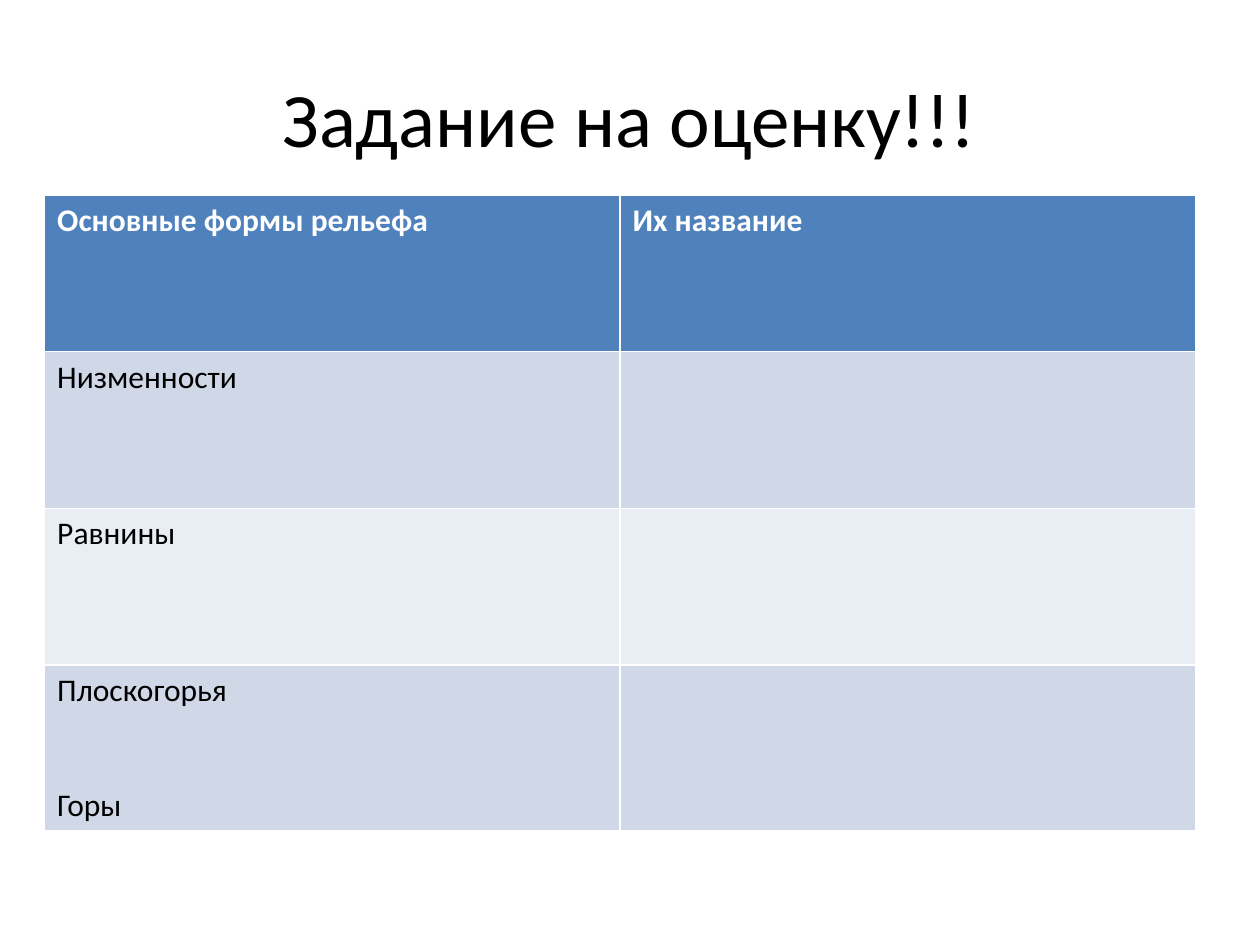
"""Build a worksheet slide about landforms with a two-column table."""
import dataclasses

import pptx
import pptx.dml.color
import pptx.enum.text
import pptx.util

Cm = pptx.util.Cm


@dataclasses.dataclass(frozen=True)
class Theme:
    """Colours, font and type sizes of the slide."""
    font: str = "Calibri"
    ink: str = "000000"
    header_ink: str = "FFFFFF"
    header_fill: str = "4F81BD"
    bands: tuple = ("D0D8E8", "E9EDF4")
    title_size: int = 44
    cell_size: int = 18


def write(paragraph, text, *, font, size, color, bold=False, align=None, gap=0):
    """Put formatted text into a paragraph."""
    paragraph.alignment = align
    paragraph.space_before = pptx.util.Pt(gap)
    run = paragraph.add_run()
    run.text = text
    run.font.name = font
    run.font.size = pptx.util.Pt(size)
    run.font.bold = bold
    run.font.color.rgb = pptx.dml.color.RGBColor.from_string(color)


class SlideBuilder:
    """Adds styled elements to the current slide."""

    def __init__(self, slide, theme):
        """Keep the slide and its theme."""
        self.slide = slide
        self.theme = theme

    def title(self, text, left, top, width, height):
        """Add the centred heading."""
        heading = self.slide.shapes.add_textbox(Cm(left), Cm(top), Cm(width), Cm(height))
        frame = heading.text_frame
        frame.word_wrap = True
        frame.vertical_anchor = pptx.enum.text.MSO_ANCHOR.MIDDLE
        write(frame.paragraphs[0], text, font=self.theme.font, size=self.theme.title_size,
              color=self.theme.ink, align=pptx.enum.text.PP_ALIGN.CENTER)

    def table(self, rows, left, top, width, row_height, gap):
        """Add a banded table whose cells hold lists of paragraphs."""
        theme = self.theme
        grid = self.slide.shapes.add_table(
            len(rows), len(rows[0]), Cm(left), Cm(top), Cm(width), Cm(row_height * len(rows))).table
        for row_index, row in enumerate(rows):
            is_header = row_index == 0
            fill = theme.header_fill if is_header else theme.bands[(row_index - 1) % 2]
            for column_index, lines in enumerate(row):
                cell = grid.cell(row_index, column_index)
                cell.fill.solid()
                cell.fill.fore_color.rgb = pptx.dml.color.RGBColor.from_string(fill)
                frame = cell.text_frame
                for line_index, line in enumerate(lines):
                    paragraph = frame.add_paragraph() if line_index else frame.paragraphs[0]
                    write(paragraph, line, font=theme.font, size=theme.cell_size,
                          color=theme.header_ink if is_header else theme.ink,
                          bold=is_header, gap=gap if line_index else 0)


def main():
    """Build and save the presentation."""
    presentation = pptx.Presentation()
    presentation.slide_width = Cm(25.4)
    presentation.slide_height = Cm(19.05)
    builder = SlideBuilder(presentation.slides.add_slide(presentation.slide_layouts[6]), Theme())
    builder.title("Задание на оценку!!!", 1.27, 0.76, 22.86, 3.18)
    landforms = [
        (["Основные формы рельефа"], ["Их название"]),
        (["Низменности"], []),
        (["Равнины"], []),
        (["Плоскогорья", "Горы"], []),
    ]
    builder.table(landforms, left=0.9, top=3.93, width=23.2, row_height=3.16, gap=44)
    presentation.save("out.pptx")


if __name__ == "__main__":
    main()
